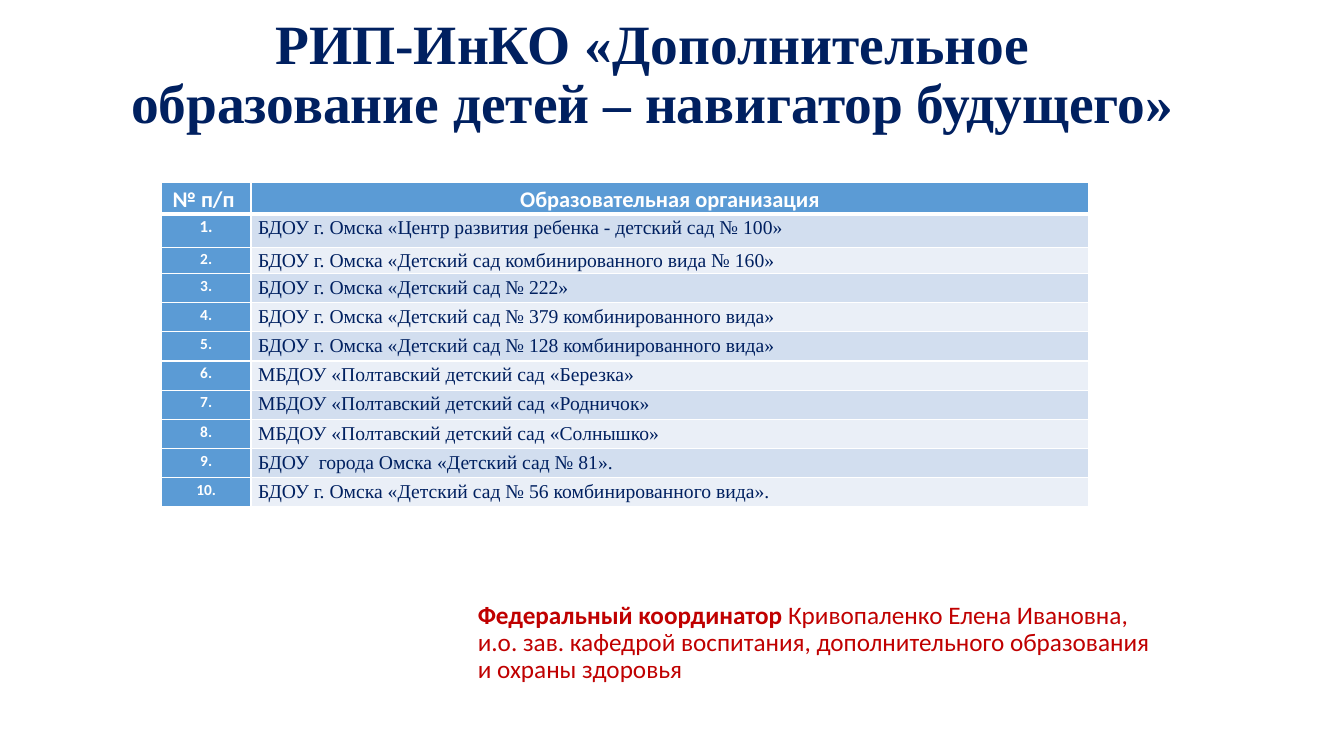
from dataclasses import dataclass

from lxml import etree
from pptx import Presentation
from pptx.dml.color import RGBColor
from pptx.enum.text import MSO_ANCHOR, MSO_AUTO_SIZE, PP_ALIGN
from pptx.oxml.ns import qn
from pptx.util import Inches, Pt

LEFT, CENTER = PP_ALIGN.LEFT, PP_ALIGN.CENTER
TOP, MIDDLE = MSO_ANCHOR.TOP, MSO_ANCHOR.MIDDLE
NO_AUTOFIT = MSO_AUTO_SIZE.NONE
TITLE_ONLY = 5


@dataclass(frozen=True)
class Theme:
    """Colours, fonts and type sizes of the slide."""
    navy: str = "002060"
    red: str = "C00000"
    white: str = "FFFFFF"
    blue: str = "5B9BD5"
    bands: tuple = ("D2DEEF", "EAEFF7")
    serif: str = "Times New Roman"
    sans: str = "Calibri"
    title_size: float = 39.6
    coordinator_size: float = 18
    header_size: float = 16
    organisation_size: float = 14
    first_number_size: float = 12
    number_size: float = 11


THEME = Theme()

TITLE = "РИП-ИнКО «Дополнительное образование детей – навигатор будущего»"
HEADERS = ("№ п/п ", "Образовательная организация")
ORGANISATIONS = (
    "БДОУ г. Омска «Центр развития ребенка - детский сад № 100»",
    "БДОУ г. Омска «Детский сад комбинированного вида № 160»",
    "БДОУ г. Омска «Детский сад № 222»",
    "БДОУ г. Омска «Детский сад № 379 комбинированного вида»",
    "БДОУ г. Омска «Детский сад № 128 комбинированного вида»",
    "МБДОУ «Полтавский детский сад «Березка»",
    "МБДОУ «Полтавский детский сад «Родничок»",
    "МБДОУ «Полтавский детский сад «Солнышко»",
    "БДОУ  города Омска «Детский сад № 81».",
    "БДОУ г. Омска «Детский сад № 56 комбинированного вида».",
)
COORDINATOR_ROLE = "Федеральный координатор "
COORDINATOR = ("Кривопаленко Елена Ивановна, и.о. зав. кафедрой воспитания, "
               "дополнительного образования и охраны здоровья")

COLUMN_WIDTHS = (0.89, 8.31)
ROW_HEIGHT = 0.29
SPECIAL_ROW_HEIGHTS = {1: 0.33, 2: 0.26}


def add_text(frame, text, *, font, size, color, bold=False, align=LEFT, spacing=0.9):
    """Append a formatted run to the first paragraph of a text frame."""
    paragraph = frame.paragraphs[0]
    paragraph.alignment = align
    paragraph.line_spacing = spacing
    paragraph.space_before = Pt(0)
    run = paragraph.add_run()
    run.text = text
    run.font.name = font
    run.font.size = Pt(size)
    run.font.bold = bold
    run.font.color.rgb = RGBColor.from_string(color)


def set_borders(cell, color, bottom_width):
    """Draw thin borders round a cell, with a bottom one of its own width."""
    properties = cell._tc.get_or_add_tcPr()
    for side, width in (("L", 1), ("R", 1), ("T", 1), ("B", bottom_width)):
        line = etree.SubElement(properties, qn(f"a:ln{side}"), w=str(Pt(width)))
        fill = etree.SubElement(line, qn("a:solidFill"))
        etree.SubElement(fill, qn("a:srgbClr"), val=color)


def fill_cell(cell, text, fill, *, bottom_width=1, **text_format):
    """Write, border and colour one table cell."""
    cell.margin_left = cell.margin_right = Inches(0.07)
    cell.margin_top = cell.margin_bottom = Inches(0)
    cell.vertical_anchor = TOP
    set_borders(cell, THEME.white, bottom_width)
    cell.fill.solid()
    cell.fill.fore_color.rgb = RGBColor.from_string(fill)
    add_text(cell.text_frame, text, spacing=1.15, **text_format)


def add_title(slide):
    """Place and fill the title placeholder."""
    title = slide.shapes.title
    title.left, title.top = Inches(1.08), Inches(0.35)
    title.width, title.height = Inches(10.78), Inches(0.81)
    frame = title.text_frame
    frame.word_wrap = True
    frame.auto_size = NO_AUTOFIT
    frame.vertical_anchor = MIDDLE
    add_text(frame, TITLE, font=THEME.serif, size=THEME.title_size,
             color=THEME.navy, bold=True, align=CENTER)


def add_organisations(slide):
    """Build the numbered table of organisations."""
    row_count = len(ORGANISATIONS) + 1
    table = slide.shapes.add_table(
        row_count, len(COLUMN_WIDTHS), Inches(1.6), Inches(1.81),
        Inches(sum(COLUMN_WIDTHS)), Inches(ROW_HEIGHT * row_count)).table
    for column, width in zip(table.columns, COLUMN_WIDTHS):
        column.width = Inches(width)
    for index, row in enumerate(table.rows):
        row.height = Inches(SPECIAL_ROW_HEIGHTS.get(index, ROW_HEIGHT))

    label = dict(font=THEME.sans, color=THEME.white, bold=True, align=CENTER)
    for column, header in enumerate(HEADERS):
        fill_cell(table.cell(0, column), header, THEME.blue, bottom_width=3,
                  size=THEME.header_size, **label)
    for number, organisation in enumerate(ORGANISATIONS, start=1):
        number_size = THEME.first_number_size if number == 1 else THEME.number_size
        fill_cell(table.cell(number, 0), f"{number}.", THEME.blue,
                  size=number_size, **label)
        fill_cell(table.cell(number, 1), organisation, THEME.bands[(number - 1) % 2],
                  font=THEME.serif, size=THEME.organisation_size, color=THEME.navy)


def add_coordinator(slide):
    """Add the line naming the federal coordinator."""
    frame = slide.shapes.add_textbox(
        Inches(4.64), Inches(5.93), Inches(7.05), Inches(0.49)).text_frame
    frame.word_wrap = True
    for text, bold in ((COORDINATOR_ROLE, True), (COORDINATOR, False)):
        add_text(frame, text, font=THEME.sans, size=THEME.coordinator_size,
                 color=THEME.red, bold=bold)


def main():
    """Build the slide and save it."""
    presentation = Presentation()
    presentation.slide_width = Inches(13.33)
    presentation.slide_height = Inches(7.5)
    slide = presentation.slides.add_slide(presentation.slide_layouts[TITLE_ONLY])
    add_organisations(slide)
    add_coordinator(slide)
    add_title(slide)
    presentation.save("out.pptx")


if __name__ == "__main__":
    main()
